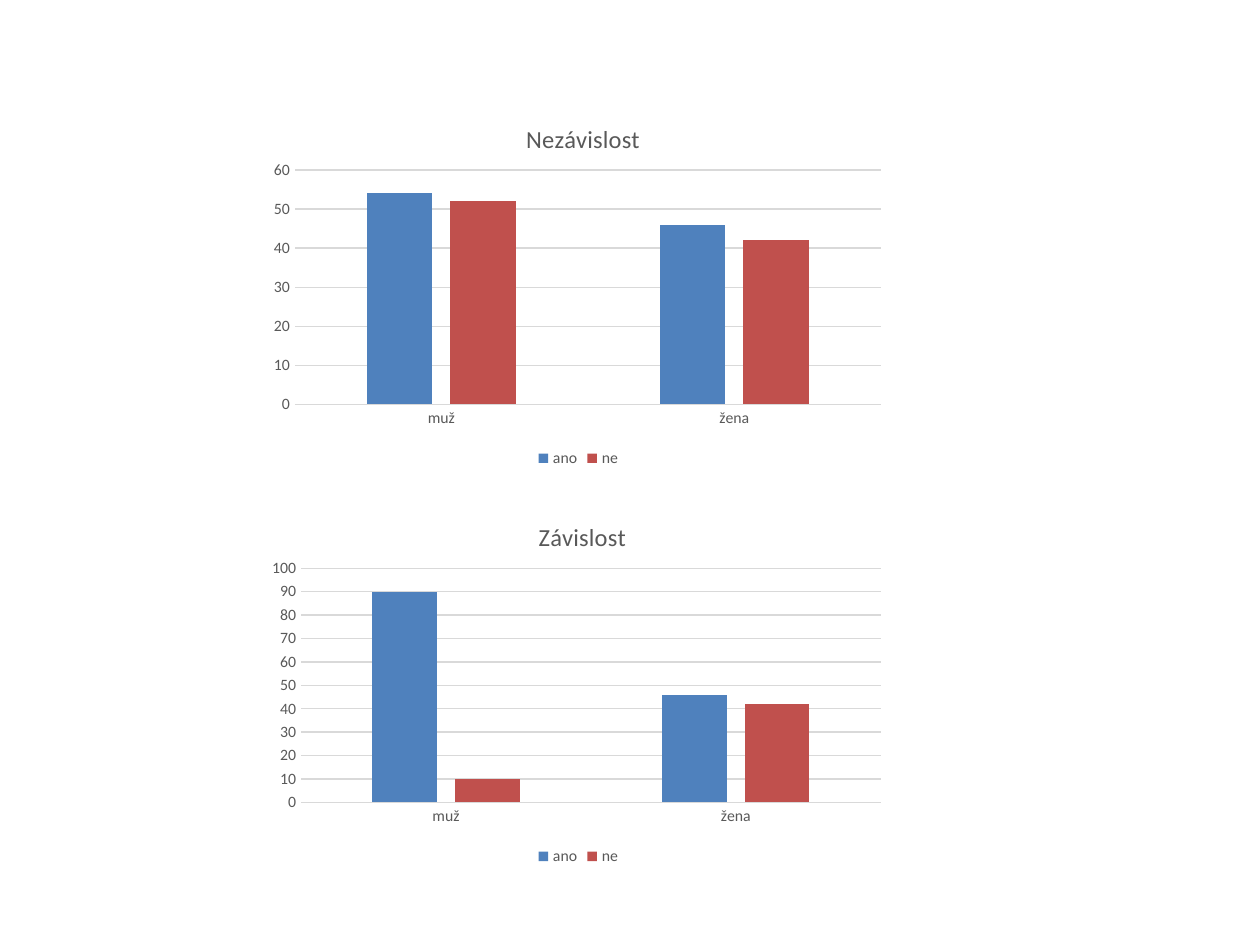
from dataclasses import dataclass

from lxml.etree import SubElement
from pptx import Presentation
from pptx.chart.data import CategoryChartData as ChartData
from pptx.dml.color import RGBColor
from pptx.enum.chart import XL_CHART_TYPE as ChartType
from pptx.enum.chart import XL_LEGEND_POSITION as LegendPosition
from pptx.enum.chart import XL_TICK_MARK as TickMark
from pptx.oxml import parse_xml
from pptx.oxml.ns import nsdecls, qn
from pptx.util import Inches, Pt

COLORS = {"ano": "4F81BD", "ne": "C0504D", "text": "595959", "grid": "D9D9D9"}
GENDERS = ("muž", "žena")
PLOT_RIGHT = 0.98
LABEL_FORMAT = {"name": "Calibri", "size": Pt(9), "bold": False}
TITLE_FORMAT = {"name": "Calibri", "size": Pt(14), "bold": False}


@dataclass
class AnswerChart:
    title: str
    top: float
    answers: dict[str, tuple[int, int]]
    title_left: float
    plot_left: float
    axis_max: int


CHARTS = (
    AnswerChart("Nezávislost", 0.75, {"ano": (54, 46), "ne": (52, 42)}, 0.41, 0.05, 60),
    AnswerChart("Závislost", 3.91, {"ano": (90, 46), "ne": (10, 42)}, 0.43, 0.06, 100),
)


def rgb(role: str) -> RGBColor:
    return RGBColor.from_string(COLORS[role])


def format_font(font, values: dict) -> None:
    for attribute, value in values.items():
        setattr(font, attribute, value)
    font.color.rgb = rgb("text")


def format_line(line) -> None:
    line.color.rgb = rgb("grid")
    line.width = Pt(0.75)


def place(parent, index: int, settings: dict) -> None:
    for old in parent.findall(qn("c:layout")):
        parent.remove(old)
    layout = parse_xml(f"<c:layout {nsdecls('c')}><c:manualLayout/></c:layout>")
    for tag, value in settings.items():
        SubElement(layout[0], qn(f"c:{tag}")).set("val", str(value))
    parent.insert(index, layout)


def draw_chart(slide, spec: AnswerChart) -> None:
    data = ChartData()
    data.categories = GENDERS
    for answer, percentages in spec.answers.items():
        data.add_series(answer, percentages)
    chart = slide.shapes.add_chart(
        ChartType.COLUMN_CLUSTERED,
        Inches(2.09), Inches(spec.top), Inches(5), Inches(3), data,
    ).chart
    format_font(chart.font, LABEL_FORMAT)

    chart.has_title = True
    heading = chart.chart_title.text_frame
    heading.text = spec.title
    format_font(heading.paragraphs[0].runs[0].font, TITLE_FORMAT)
    chart.chart_title.include_in_layout = False

    chart.has_legend = True
    chart.legend.position = LegendPosition.BOTTOM
    chart.legend.include_in_layout = False
    format_font(chart.legend.font, LABEL_FORMAT)

    for axis in (chart.category_axis, chart.value_axis):
        axis.major_tick_mark = axis.minor_tick_mark = TickMark.NONE
        format_font(axis.tick_labels.font, LABEL_FORMAT)
    format_line(chart.category_axis.format.line)
    scale = chart.value_axis
    scale.minimum_scale, scale.maximum_scale, scale.major_unit = 0, spec.axis_max, 10
    scale.format.line.fill.background()
    format_line(scale.major_gridlines.format.line)

    plot = chart.plots[0]
    plot.gap_width, plot.overlap, plot.vary_by_categories = 219, -27, False
    for series in plot.series:
        series.format.fill.solid()
        series.format.fill.fore_color.rgb = rgb(series.name)

    edges = {"xMode": "edge", "yMode": "edge"}
    title_element = chart.chart_title._element
    place(title_element, 1, {**edges, "x": spec.title_left, "y": 0.06})
    place(chart._chartSpace.chart.plotArea, 0, {
        "layoutTarget": "inner", **edges, "x": spec.plot_left, "y": 0.2,
        "w": round(PLOT_RIGHT - spec.plot_left, 2), "h": 0.62,
    })


def main() -> None:
    deck = Presentation()
    deck.slide_width, deck.slide_height = Inches(10), Inches(7.5)
    slide = deck.slides.add_slide(deck.slide_layouts[6])
    for spec in CHARTS:
        draw_chart(slide, spec)
    deck.save("out.pptx")


if __name__ == "__main__":
    main()
